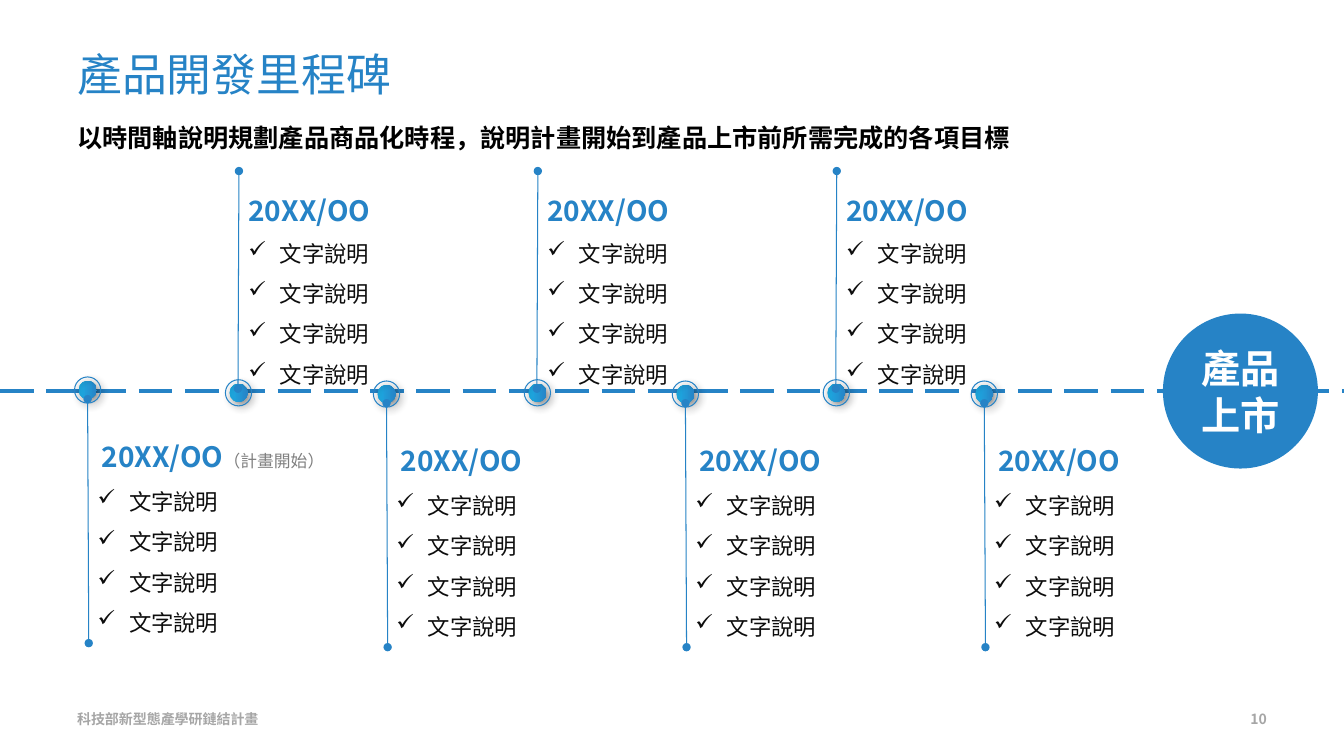
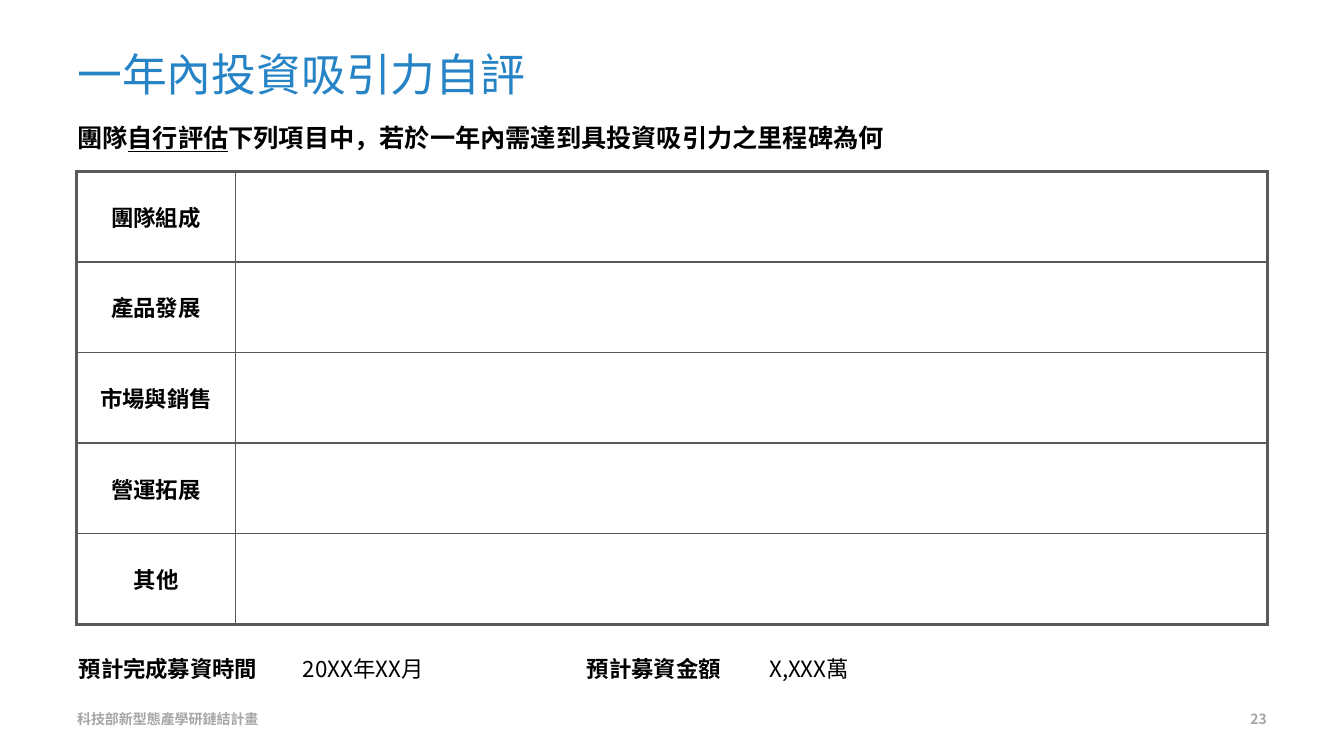
from lxml import etree
from pptx import Presentation
from pptx.dml.color import RGBColor
from pptx.enum.dml import MSO_LINE
from pptx.enum.shapes import MSO_CONNECTOR, MSO_SHAPE
from pptx.enum.text import MSO_ANCHOR, MSO_AUTO_SIZE, PP_ALIGN
from pptx.oxml.ns import qn
from pptx.util import Pt

# Enum members
LEFT, CENTER, RIGHT = PP_ALIGN.LEFT, PP_ALIGN.CENTER, PP_ALIGN.RIGHT
MIDDLE, TOP = MSO_ANCHOR.MIDDLE, MSO_ANCHOR.TOP
NO_AUTOFIT = MSO_AUTO_SIZE.NONE
OVAL, STRAIGHT = MSO_SHAPE.OVAL, MSO_CONNECTOR.STRAIGHT
LONG_DASH = MSO_LINE.LONG_DASH

# Shared colours and fonts
BLUE = RGBColor(0x26, 0x83, 0xC6)
CYAN = RGBColor(0x1C, 0xAD, 0xE4)
BLACK = RGBColor(0, 0, 0)
INK = RGBColor(0x0D, 0x0D, 0x0D)
NOTE_GRAY = RGBColor(0x80, 0x80, 0x80)
FOOTER_GRAY = RGBColor(0xA6, 0xA6, 0xA6)
BORDER_GRAY = RGBColor(0x59, 0x59, 0x59)
WHITE = RGBColor(0xFF, 0xFF, 0xFF)
SC, TC = "Noto Sans CJK SC", "Noto Sans CJK TC"

# Shared layout, in points
MARGIN, CONTENT_WIDTH = 48, 864
MILESTONE_STEP = 213.5
AXIS_Y = 279.3
LEADING = 1.8
FOOTER = "科技部新型態產學研鏈結計畫"


def place(shape, x, y, width, height):
    shape.left, shape.top = Pt(x), Pt(y)
    shape.width, shape.height = Pt(width), Pt(height)


def style(paragraph, size, color, family=TC, bold=False, align=LEFT):
    paragraph.alignment = align
    font = paragraph.font
    font.size, font.bold, font.name = Pt(size), bold, family
    font.color.rgb = color
    latin = paragraph._p.pPr.find(qn("a:defRPr")).find(qn("a:latin"))
    east_asian = etree.Element(qn("a:ea"), typeface=family)
    latin.addnext(east_asian)


def set_bullet(paragraph, char=None, indent=0):
    properties = paragraph._p.get_or_add_pPr()
    properties.set("marL", str(Pt(indent)))
    properties.set("indent", str(-Pt(indent)))
    if char:
        etree.SubElement(properties, qn("a:buChar"), char=char)
    else:
        etree.SubElement(properties, qn("a:buNone"))


def add_text(slide, x, y, width, height, anchor=TOP):
    frame = slide.shapes.add_textbox(Pt(x), Pt(y), Pt(width), Pt(height)).text_frame
    frame.word_wrap = True
    frame.vertical_anchor = anchor
    return frame


def add_footer(slide, x, text, align):
    paragraph = add_text(slide, x, 499, 224, 28.8, MIDDLE).paragraphs[0]
    paragraph.text = text
    style(paragraph, 10, FOOTER_GRAY, SC, True, align)


def add_page(deck, title, lead_parts, number):
    """Slide with title, lead sentence and footer; lead parts are (text, underlined)."""
    slide = deck.slides.add_slide(deck.slide_layouts[1])
    heading, lead = slide.shapes.title, slide.placeholders[1]
    place(heading, MARGIN, 21.6, CONTENT_WIDTH, 62)
    place(lead, MARGIN, 83.8, CONTENT_WIDTH, 38.8)
    for placeholder in (heading, lead):
        placeholder.text_frame.auto_size = NO_AUTOFIT

    heading.text_frame.text = title
    heading.text_frame.vertical_anchor = MIDDLE
    style(heading.text_frame.paragraphs[0], 32, BLUE, SC)

    sentence = lead.text_frame.paragraphs[0]
    set_bullet(sentence)
    sentence.space_before = Pt(0)
    for text, underlined in lead_parts:
        run = sentence.add_run()
        run.text = text
        if underlined:
            run.font.underline = True
    style(sentence, 18, BLACK, TC, True)

    add_footer(slide, MARGIN, FOOTER, LEFT)
    add_footer(slide, MARGIN + CONTENT_WIDTH - 224, number, RIGHT)
    return slide


# Timeline elements
def add_line(slide, start, end, width):
    line = slide.shapes.add_connector(STRAIGHT, *(Pt(v) for v in (*start, *end)))
    line.line.color.rgb = BLUE
    line.line.width = Pt(width)
    etree.SubElement(line._element.spPr, qn("a:effectLst"))
    return line


def add_circle(slide, x, y, diameter):
    corner = (Pt(x - diameter / 2), Pt(y - diameter / 2))
    circle = slide.shapes.add_shape(OVAL, *corner, Pt(diameter), Pt(diameter))
    circle.shadow.inherit = False
    return circle


def cast_shadow(shape):
    effects = shape._element.spPr.find(qn("a:effectLst"))
    shadow = etree.SubElement(effects, qn("a:outerShdw"), blurRad=str(Pt(4)),
                              dist=str(Pt(3)), dir="2700000", rotWithShape="0")
    color = etree.SubElement(shadow, qn("a:srgbClr"), val="000000")
    etree.SubElement(color, qn("a:alpha"), val="40000")


def add_hub(slide, x, y):
    disc = add_circle(slide, x, y, 13)
    disc.fill.gradient()
    disc.fill.gradient_angle = 0
    for stop, color, position in zip(disc.fill.gradient_stops, (CYAN, BLUE), (0, 1)):
        stop.color.rgb = color
        stop.position = position
    disc.line.fill.background()
    ring = add_circle(slide, x, y, 18.7)
    ring.fill.background()
    ring.line.color.rgb = BLUE
    ring.line.width = Pt(0)
    for circle in (disc, ring):
        cast_shadow(circle)


def add_stem(slide, start, end):
    outline = add_line(slide, start, end, 0.75).line._get_or_add_ln()
    for tip in ("a:headEnd", "a:tailEnd"):
        etree.SubElement(outline, qn(tip), type="oval")


def add_milestone(slide, x, y, above, date, tasks, note=""):
    add_hub(slide, x, y)
    if above:
        add_stem(slide, (x - 0.4, y - 2.9), (x + 0.3, y - 158.4))
        date_x, date_y, list_y = x, y - 157.7, y - 122.4
    else:
        add_stem(slide, (x, y + 6.5), (x + 0.8, y + 180.8))
        date_x, date_y, list_y = x + 2.9, y + 19.5, y + 56.9

    when = add_text(slide, date_x, date_y, 180, 38.9).paragraphs[0]
    when.add_run().text = date
    if note:
        remark = when.add_run()
        remark.text = note
        remark.font.size, remark.font.bold = Pt(12), False
        remark.font.color.rgb = NOTE_GRAY
    when.line_spacing = Pt(20 * LEADING)
    style(when, 20, BLUE, TC, True)

    checklist = add_text(slide, x, list_y, 172, 123.8)
    checklist.text = "\n".join(tasks)
    for task in checklist.paragraphs:
        set_bullet(task, "✓", 22.5)
        task.line_spacing = Pt(16 * LEADING)
        style(task, 16, INK)


def add_launch_badge(slide):
    badge = add_circle(slide, 886, AXIS_Y, 108.7)
    badge.fill.solid()
    badge.fill.fore_color.rgb = BLUE
    badge.line.color.rgb = BLUE
    badge.line.width = Pt(2)
    frame = badge.text_frame
    frame.vertical_anchor = MIDDLE
    frame.text = "產品\n上市"
    for paragraph in frame.paragraphs:
        paragraph.line_spacing = Pt(33.6)
        style(paragraph, 28, WHITE, TC, True, CENTER)


# Table elements
def add_grid(slide, x, y, widths, row_height, rows):
    """Unfilled table; cells are (text, bold, alignment)."""
    table = slide.shapes.add_table(len(rows), len(widths), Pt(x), Pt(y), Pt(sum(widths)),
                                   Pt(row_height * len(rows))).table
    table.first_row = table.horz_banding = False
    for column, width in zip(table.columns, widths):
        column.width = Pt(width)
    for r, row in enumerate(rows):
        table.rows[r].height = Pt(row_height)
        for c, (text, bold, align) in enumerate(row):
            cell = table.cell(r, c)
            cell.fill.background()
            cell.vertical_anchor = MIDDLE
            cell.text = text
            style(cell.text_frame.paragraphs[0], 16, BLACK, SC, bold, align)
    return table


def add_borders(table, outer, inner):
    last_row, last_column = len(table.rows) - 1, len(table.columns) - 1
    for r in range(last_row + 1):
        for c in range(last_column + 1):
            properties = table.cell(r, c)._tc.get_or_add_tcPr()
            at_edge = {"a:lnL": c == 0, "a:lnR": c == last_column,
                       "a:lnT": r == 0, "a:lnB": r == last_row}
            for position, (side, is_outer) in enumerate(at_edge.items()):
                width = Pt(outer if is_outer else inner)
                border = etree.Element(qn(side), w=str(width))
                fill = etree.SubElement(border, qn("a:solidFill"))
                etree.SubElement(fill, qn("a:srgbClr"), val=str(BORDER_GRAY))
                properties.insert(position, border)


# Slides
def build_milestones(deck):
    lead = "以時間軸說明規劃產品商品化時程，說明計畫開始到產品上市前所需完成的各項目標"
    slide = add_page(deck, "產品開發里程碑", [(lead, False)], "10")
    axis = add_line(slide, (0, AXIS_Y), (960, AXIS_Y), 3)
    axis.line.dash_style = LONG_DASH
    add_launch_badge(slide)

    date, tasks = "20XX/OO", ["文字說明"] * 4
    for i in range(4):
        x = 62.6 + i * MILESTONE_STEP
        if i == 0:
            add_milestone(slide, x, 278.6, False, date, tasks, "（計畫開始）")
        else:
            add_milestone(slide, x, 281.5, False, date, tasks)
    for i in range(3):
        add_milestone(slide, 170.4 + i * MILESTONE_STEP, 280.6, True, date, tasks)


def build_self_review(deck):
    lead = [("團隊", False), ("自行評估", True),
            ("下列項目中，若於一年內需達到具投資吸引力之里程碑為何", False)]
    slide = add_page(deck, "一年內投資吸引力自評", lead, "23")

    topics = ["團隊組成", "產品發展", "市場與銷售", "營運拓展", "其他"]
    review = add_grid(slide, 54.7, 122.4, [113.5, 737], 64.7,
                      [[(topic, True, CENTER), ("", False, LEFT)] for topic in topics])
    add_borders(review, 2.25, 1)

    funding = [("預計完成募資時間", True, LEFT), ("20XX年XX月", False, LEFT),
               ("預計募資金額", True, LEFT), ("X,XXX萬", False, LEFT)]
    add_grid(slide, 49, 457.2, [160, 203, 130.3, 363], 39.6, [funding])


def main():
    deck = Presentation()
    deck.slide_width, deck.slide_height = Pt(960), Pt(540)
    build_milestones(deck)
    build_self_review(deck)
    deck.save("out.pptx")


if __name__ == "__main__":
    main()
